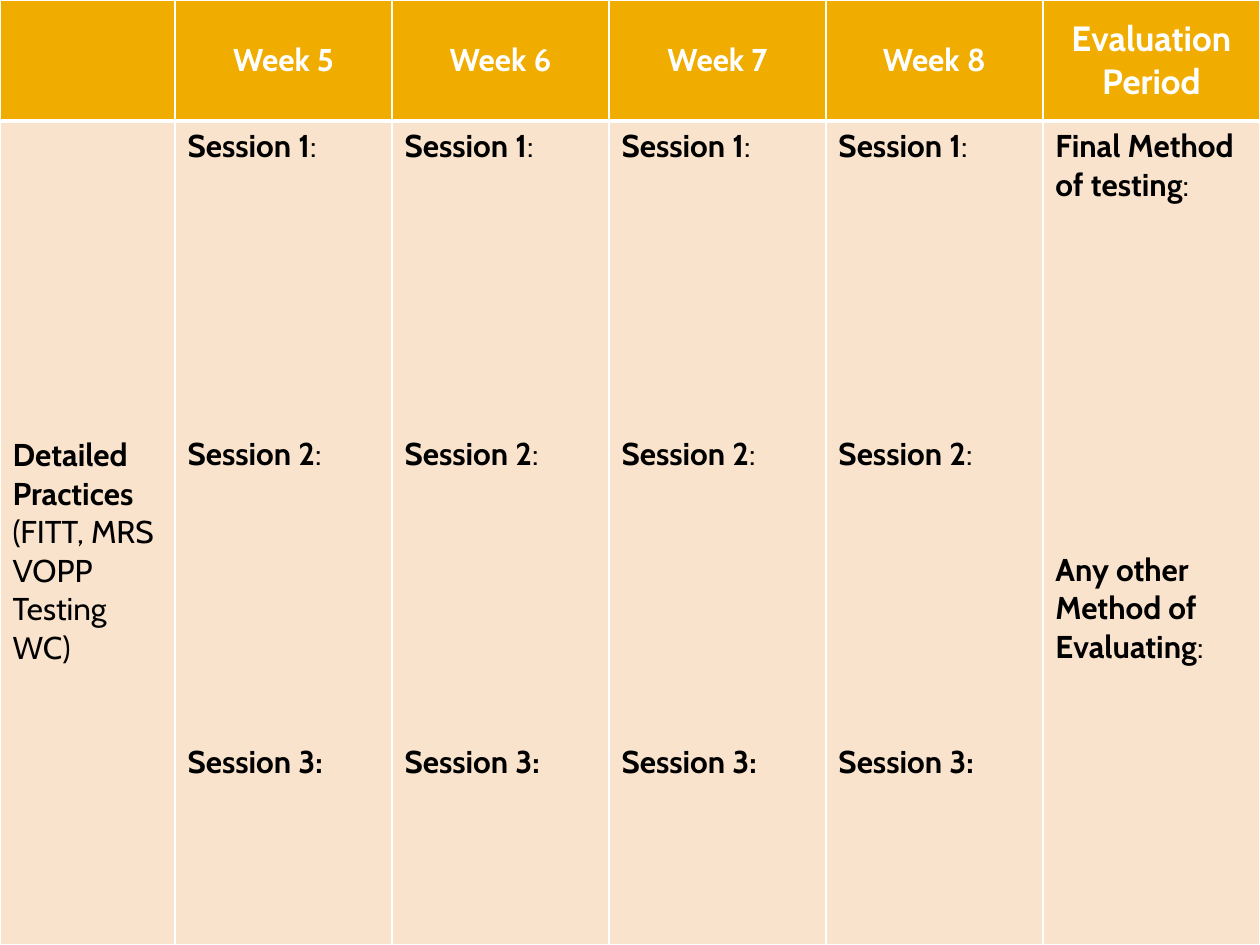
from lxml.etree import SubElement
from pptx import Presentation
from pptx.dml.color import RGBColor
from pptx.enum.text import MSO_ANCHOR as Anchor, PP_ALIGN as Align
from pptx.oxml.ns import qn
from pptx.util import Pt

PX = 914400 / 126
WHITE = RGBColor(0xFF, 0xFF, 0xFF)
BLACK = RGBColor(0x00, 0x00, 0x00)
GOLD = RGBColor(0xF0, 0xAD, 0x00)
PEACH = RGBColor(0xF9, 0xE3, 0xCC)
FONT = "Cabin"


def px(n):
    return round(n * PX)


def style(cell, fill, top, base):
    """Draw white borders (in points), then the fill."""
    props = cell._tc.get_or_add_tcPr()
    for side, width in (("L", 1), ("R", 1), ("T", top), ("B", base)):
        line = SubElement(props, qn(f"a:ln{side}"), w=str(Pt(width)))
        paint = SubElement(line, qn("a:solidFill"))
        SubElement(paint, qn("a:srgbClr"), val=str(WHITE))
    cell.fill.solid()
    cell.fill.fore_color.rgb = fill


deck = Presentation()
deck.slide_width, deck.slide_height = px(1260), px(945)
slide = deck.slides.add_slide(deck.slide_layouts[6])

# Table grid
heads = ["", "Week 5", "Week 6", "Week 7", "Week 8", "Evaluation Period"]
table = slide.shapes.add_table(2, len(heads), 0, 0, px(1260), px(945)).table
table.horz_banding = False
for i, col in enumerate(table.columns):
    col.width = px(217 if i else 175)
table.rows[0].height = px(121)
table.rows[1].height = px(824)

# Header row
for i, head in enumerate(heads):
    cell = table.cell(0, i)
    style(cell, GOLD, 1, 3)
    cell.vertical_anchor = Anchor.MIDDLE
    cell.text = head
    para = cell.text_frame.paragraphs[0]
    para.alignment = Align.CENTER
    para.font.name = FONT
    para.font.size = Pt(20 if head == heads[-1] else 18)
    para.font.bold = True
    para.font.color.rgb = WHITE

# Body row: each cell has a gap in points and (bold, plain) paragraphs
label = (0, [("Detailed Practices ", "(FITT, MRS VOPP Testing WC)")])
week = (154, [("Session 1", ":"), ("Session 2", ":"), ("Session 3:", "")])
final = (198, [("Final Method of testing", ":"),
               ("Any other Method of Evaluating", ":")])
for i, (gap, parts) in enumerate([label] + [week] * 4 + [final]):
    cell = table.cell(1, i)
    style(cell, PEACH, 3, 1)
    frame = cell.text_frame
    for j, part in enumerate(parts):
        para = frame.add_paragraph() if j else frame.paragraphs[0]
        para.space_before = Pt(gap if j else 0)
        para.font.name = FONT
        para.font.size = Pt(18)
        para.font.color.rgb = BLACK
        for text, bold in zip(part, (True, False)):
            if text:
                run = para.add_run()
                run.text = text
                run.font.bold = bold

# The row label sits a little below the middle
side = table.cell(1, 0)
side.vertical_anchor = Anchor.MIDDLE
side.margin_top = px(44)

deck.save("out.pptx")
